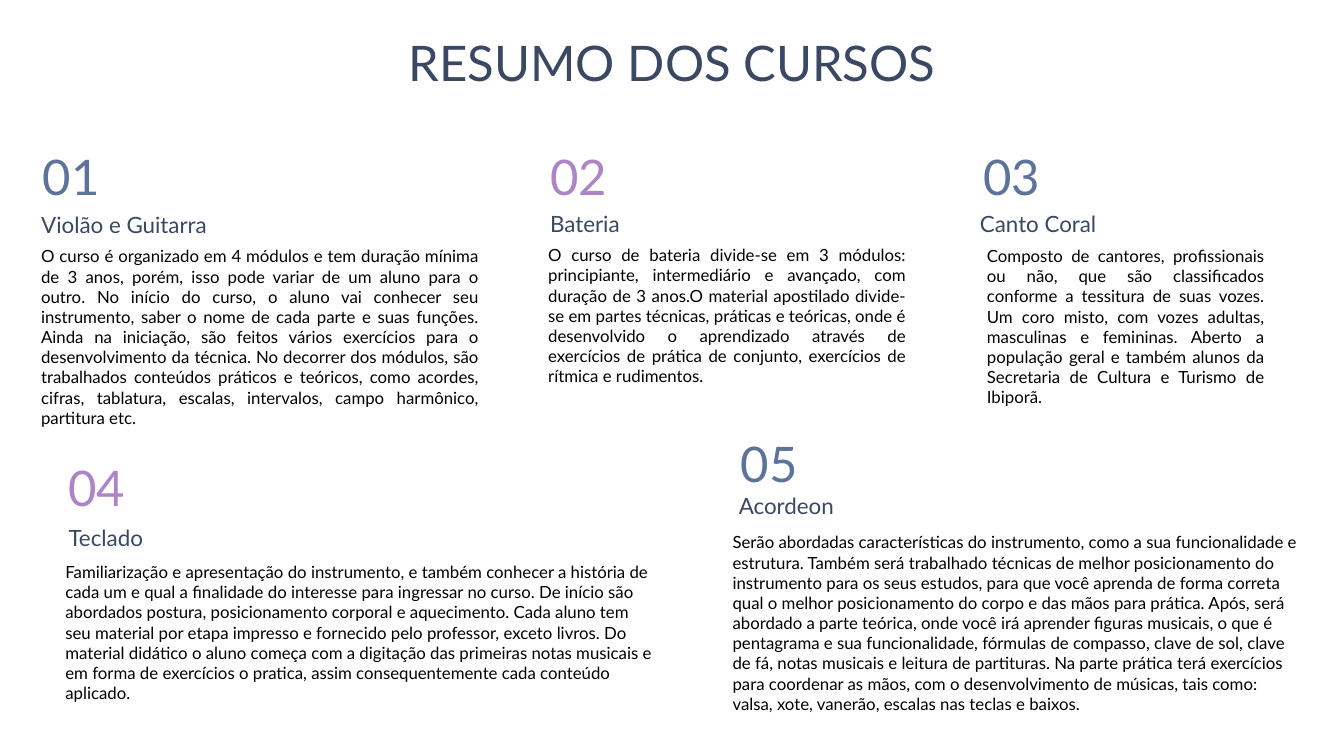
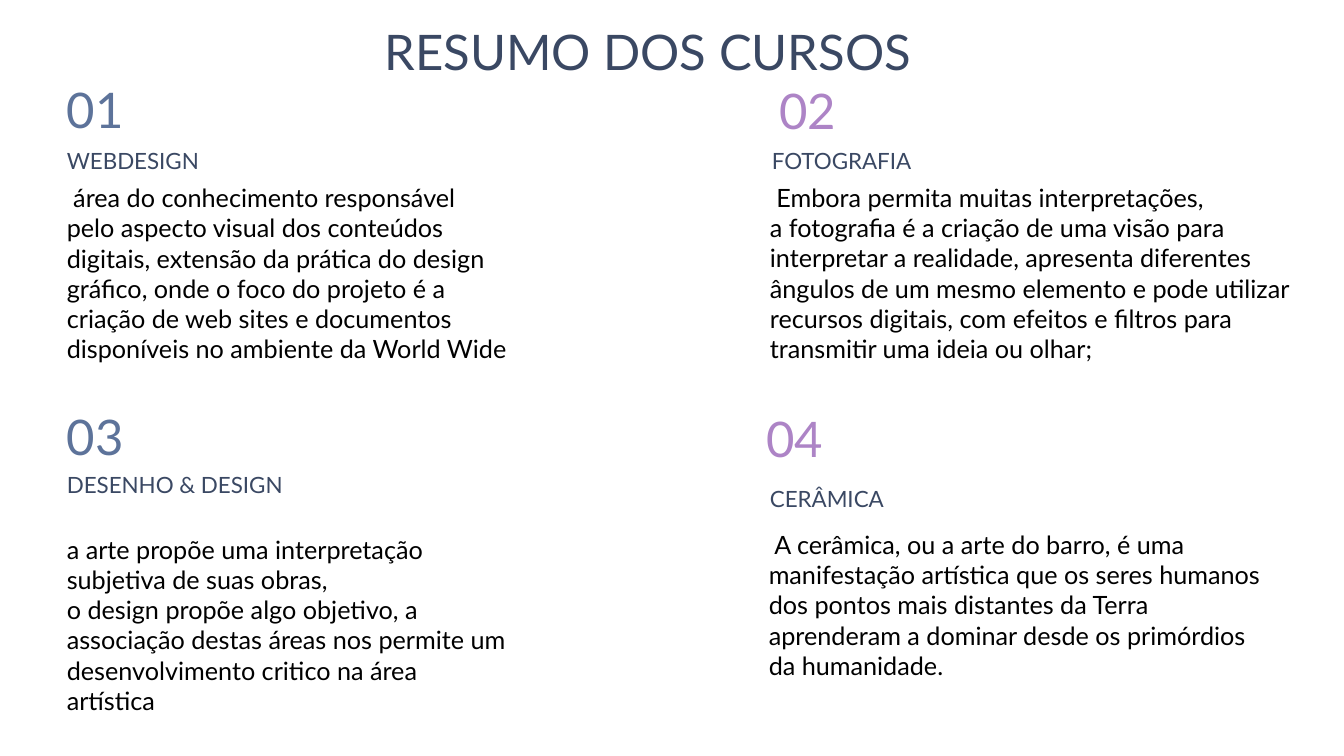
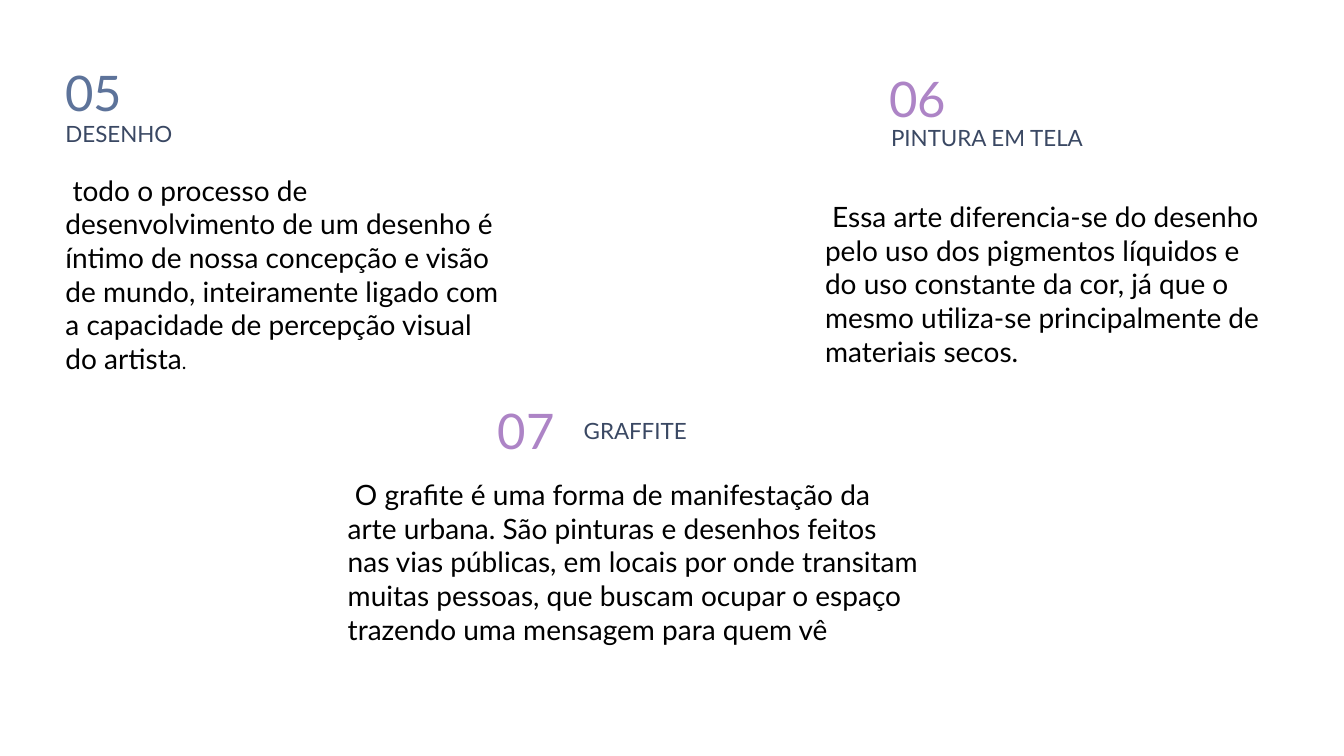
from dataclasses import dataclass

from pptx import Presentation
from pptx.dml.color import RGBColor
from pptx.enum.text import MSO_ANCHOR as Anchor, MSO_AUTO_SIZE as AutoSize, PP_ALIGN as Align
from pptx.util import Inches, Pt

FONT = "Lato"
COLORS = {"navy": "3A4863", "blue": "5D739A", "purple": "AD84C6", "text": "000000"}
WIDTH, HEIGHT = Inches(13.33), Inches(7.5)
TIGHT = (Inches(0.03), Inches(0.03))
ROOMY = (Inches(0.1), Inches(0.05))
TITLE_ONLY, BLANK = 5, 6
TITLE = "RESUMO DOS CURSOS"
NUMBER_SIZE, NAME_SIZE = 35, 16


@dataclass
class Scale:
    summary_size: int
    number_box: tuple
    name_box: tuple


@dataclass
class Course:
    number: str
    name: str
    summary: str
    box: tuple
    name_at: tuple
    summary_drop: float
    number_shift: float = 0
    accent: str = "blue"
    align: Align = Align.LEFT
    ending: str = ""
    outlined: bool = True


def percent_box(left, top, width, height):
    return (round(WIDTH * left / 100), round(HEIGHT * top / 100),
            round(WIDTH * width / 100), round(HEIGHT * height / 100))


def write(shape, text, size, color, align=Align.LEFT, inset=TIGHT):
    frame = shape.text_frame
    frame.word_wrap = True
    frame.auto_size = AutoSize.NONE
    frame.vertical_anchor = Anchor.TOP
    frame.margin_left = frame.margin_right = inset[0]
    frame.margin_top = frame.margin_bottom = inset[1]
    paragraph = frame.paragraphs[0]
    paragraph.alignment = align
    paragraph.font.name = FONT
    paragraph.font.size = Pt(size)
    paragraph.font.color.rgb = RGBColor.from_string(COLORS[color])
    paragraph.add_run().text = text.replace("~", chr(160))
    return paragraph


def add_text(slide, box, *style):
    return write(slide.shapes.add_textbox(*percent_box(*box)), *style)


def add_outline(slide, box, *style):
    left, top, width, height = percent_box(*box)
    right, bottom = left + width, top + height
    builder = slide.shapes.build_freeform(left, top)
    builder.add_line_segments([(right, top), (right, bottom), (left, bottom)], close=True)
    outline = builder.convert_to_shape()
    outline.shadow.inherit = False
    outline.fill.background()
    outline.line.fill.background()
    return write(outline, *style)


def add_title(slide, box):
    title = slide.shapes.title
    title.left, title.top, title.width, title.height = percent_box(*box)
    write(title, TITLE, NUMBER_SIZE, "navy", Align.CENTER)


def add_course(slide, course, scale):
    left, top, width, height = course.box
    name_dx, name_dy = course.name_at
    drop = course.summary_drop
    add_text(slide, (left + course.number_shift, top, *scale.number_box),
             course.number, NUMBER_SIZE, course.accent)
    add_outline(slide, (left + name_dx, top + name_dy, *scale.name_box),
                course.name, NAME_SIZE, "navy")
    add_summary, inset = (add_outline, TIGHT) if course.outlined else (add_text, ROOMY)
    summary = add_summary(slide, (left, top + drop, width, height - drop),
                          course.summary, scale.summary_size, "text", course.align, inset)
    if course.ending:
        ending = summary.add_run()
        ending.text = course.ending
        ending.font.size = Pt(14)


def add_summary_slide(deck, courses, scale, title_box=None):
    layout = deck.slide_layouts[TITLE_ONLY if title_box else BLANK]
    slide = deck.slides.add_slide(layout)
    if title_box:
        add_title(slide, title_box)
    for course in courses:
        add_course(slide, course, scale)


MUSIC = [
    Course("01", "Violão e Guitarra",
           "O curso é organizado em 4 módulos e tem duração mínima de 3 anos, porém, isso pode "
           "variar de um aluno para o outro. No início do curso, o aluno vai conhecer seu "
           "instrumento, saber o nome de cada parte e suas funções. Ainda na iniciação, são "
           "feitos vários exercícios para o desenvolvimento da técnica. No decorrer dos módulos, "
           "são trabalhados conteúdos práticos e teóricos, como acordes, cifras, tablatura, "
           "escalas, intervalos, campo harmônico, partitura etc.",
           (2.32, 18.93, 34.06, 38.53), (0.52, 8.58), 12.97, 0.64,
           align=Align.JUSTIFY, outlined=False),
    Course("02", "Bateria",
           "O curso de bateria divide-se em 3 módulos: principiante, intermediário e avançado, "
           "com duração de 3 anos.O material apostilado divide-se em partes técnicas, práticas "
           "e teóricas, onde é desenvolvido o aprendizado através de exercícios de prática de "
           "conjunto, exercícios de rítmica e rudimentos.",
           (40.56, 18.93, 27.08, 32.67), (0.15, 8.53), 13.07, 0.15, "purple", Align.JUSTIFY),
    Course("03", "Canto Coral",
           "Composto de cantores, profissionais ou não, que são classificados conforme a "
           "tessitura de suas vozes. Um coro misto, com vozes adultas, masculinas e femininas. "
           "Aberto a população geral e também alunos da Secretaria de Cultura e Turismo de "
           "Ibiporã.",
           (72.69, 18.93, 22.13, 35.87), (0, 8.53), 12.93, 0.23,
           align=Align.JUSTIFY, outlined=False),
    Course("04", "Teclado",
           "Familiarização e apresentação do instrumento, e também conhecer a história de cada "
           "um e qual a finalidade do interesse para ingressar no curso. De início são abordados "
           "postura, posicionamento corporal e aquecimento. Cada aluno tem seu material por "
           "etapa impresso e fornecido pelo professor, exceto livros. Do material didático o "
           "aluno começa com a digitação das primeiras notas musicais e em forma de exercícios "
           "o pratica, assim consequentemente cada conteúdo aplicado.",
           (4.13, 60.13, 45.39, 30.93), (0.75, 8.8), 13.52, 0.75, "purple", outlined=False),
    Course("05", "Acordeon",
           "Serão abordadas características do instrumento, como a sua funcionalidade e "
           "estrutura. Também será trabalhado técnicas de melhor posicionamento do instrumento "
           "para os seus estudos, para que você aprenda de forma correta qual o melhor "
           "posicionamento do corpo e das mãos para prática. Após, será abordado a parte "
           "teórica, onde você irá aprender figuras musicais, o que é pentagrama e sua "
           "funcionalidade, fórmulas de compasso, clave de sol, clave de fá, notas musicais e "
           "leitura de partituras. Na parte prática terá exercícios para coordenar as mãos, com "
           "o desenvolvimento de músicas, tais como: valsa, xote, vanerão, escalas nas teclas e "
           "baixos.",
           (53.77, 56.93, 43.74, 38.4), (0.98, 7.76), 12.8, 1.13, outlined=False),
]

VISUAL_ARTS = [
    Course("01", "WEBDESIGN",
           "~área do conhecimento responsável pelo aspecto visual dos conteúdos digitais, "
           "extensão da prática do design gráfico, onde o foco do projeto é a criação de web "
           "sites e documentos disponíveis no ambiente da World Wide",
           (4.75, 10.13, 33.31, 42.67), (0, 8.9), 13.6),
    Course("02", " FOTOGRAFIA",
           "~Embora permita muitas interpretações, a~fotografia~é a criação de uma visão para "
           "interpretar a realidade, apresenta diferentes ângulos de um mesmo elemento e pode "
           "utilizar recursos digitais, com efeitos e filtros para transmitir uma ideia ou olhar;",
           (57.06, 10.27, 39.38, 38.4), (-0.28, 8.76), 13.43, 0.68, "purple"),
    Course("03", "DESENHO & DESIGN",
           "a~arte~propõe uma interpretação subjetiva de suas obras, o~design~propõe algo "
           "objetivo, a associação destas áreas nos permite um desenvolvimento critico na área "
           "artística",
           (4.75, 53.33, 33.31, 41.87), (0, 8.57), 16.9),
    Course("04", "CERÂMICA",
           "~A~cerâmica, ou a~arte~do barro, é uma manifestação artística que os seres humanos "
           "dos pontos mais distantes da Terra aprenderam a dominar desde os primórdios da "
           "humanidade.",
           (56.98, 53.7, 37.58, 36.8), (0.08, 10.13), 15.9, -0.2, "purple"),
]

DRAWING_ARTS = [
    Course("05", "DESENHO",
           " todo o processo de desenvolvimento de um desenho é íntimo de nossa concepção e "
           "visão de mundo, inteiramente ligado com a capacidade de percepção visual do artista",
           (4.65, 7.87, 33.38, 42.4), (0, 7.57), 14.65, ending="."),
    Course("06", "PINTURA EM TELA",
           "~Essa arte diferencia-se do desenho pelo uso dos pigmentos líquidos e do uso "
           "constante da cor, já que o mesmo utiliza-se principalmente de materiais secos.",
           (61.16, 8.67, 33.68, 40.4), (4.92, 7.33), 17.33, 4.8, "purple"),
    Course("07", "GRAFFITE",
           "~O~grafite~é uma forma de~manifestação~da arte urbana. São pinturas e desenhos "
           "feitos nas vias públicas, em locais por onde transitam muitas pessoas, que buscam "
           "ocupar o espaço trazendo uma mensagem para quem vê",
           (25.65, 52.53, 42.99, 38), (17.56, 2.27), 10.24, 11.17, "purple"),
]


def main():
    deck = Presentation()
    deck.slide_width, deck.slide_height = WIDTH, HEIGHT
    add_summary_slide(deck, MUSIC, Scale(12, (5.25, 8.67), (21, 4.4)),
                      (29.4, 3.85, 41.26, 8.67))
    add_summary_slide(deck, VISUAL_ARTS, Scale(18, (7.35, 9.73), (29.41, 4.93)),
                      (23.95, 2.4, 48.54, 8.67))
    add_summary_slide(deck, DRAWING_ARTS, Scale(20, (6.38, 10.53), (25.43, 5.33)))
    deck.save("out.pptx")


if __name__ == "__main__":
    main()
